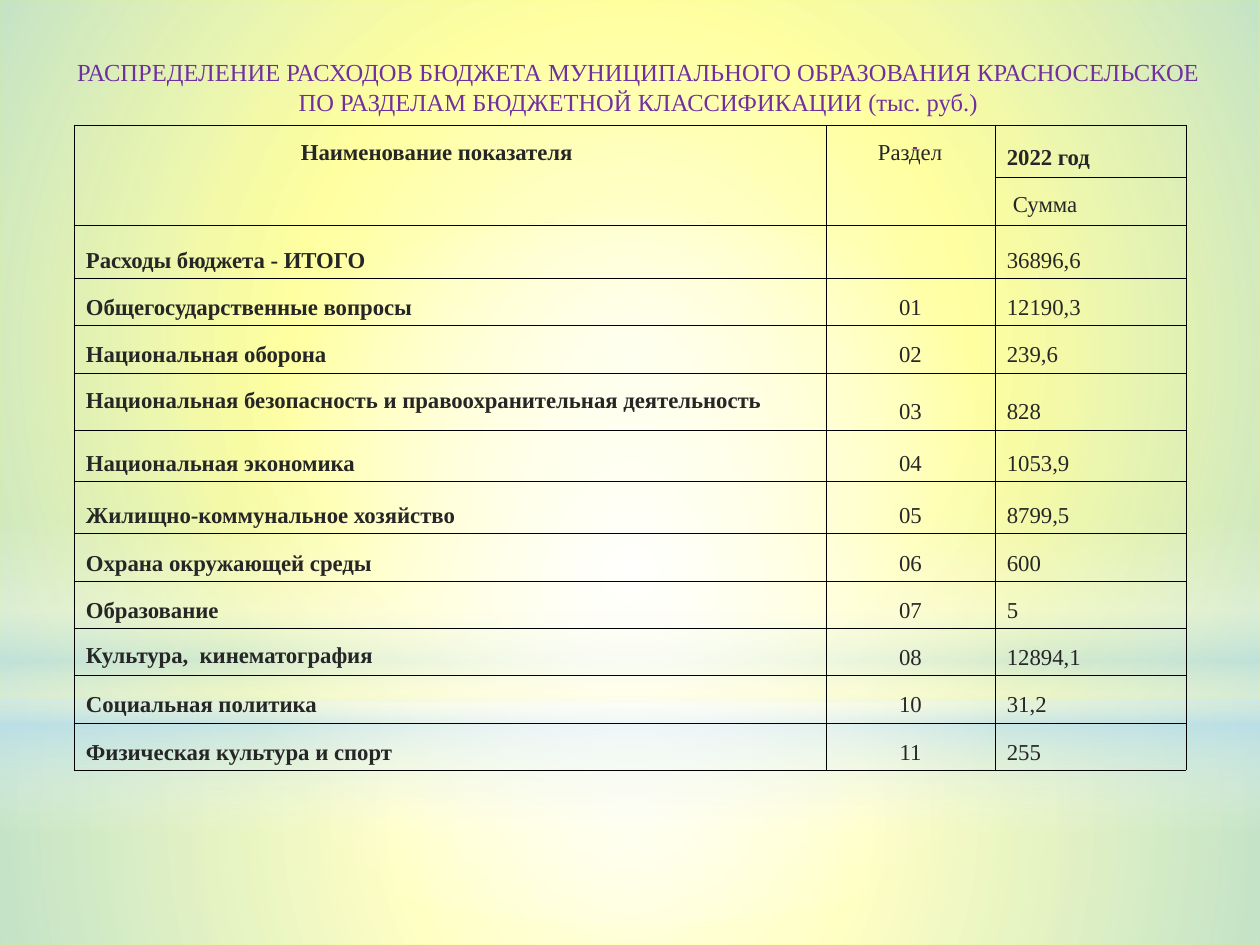
from dataclasses import dataclass
from lxml import etree
from pptx import Presentation
from pptx.dml.color import RGBColor
from pptx.enum.shapes import MSO_CONNECTOR, MSO_SHAPE
from pptx.enum.text import MSO_ANCHOR, PP_ALIGN
from pptx.oxml.ns import qn
from pptx.util import Emu, Pt

RECT, OVAL = MSO_SHAPE.RECTANGLE, MSO_SHAPE.OVAL
LINE = MSO_CONNECTOR.STRAIGHT
TOP, MID, LOW = MSO_ANCHOR.TOP, MSO_ANCHOR.MIDDLE, MSO_ANCHOR.BOTTOM
LEFT, CENTER = PP_ALIGN.LEFT, PP_ALIGN.CENTER


@dataclass(frozen=True)
class Theme:
    font: str = "Times New Roman"
    base: str = "FFFF00"
    white: str = "FFFFFF"
    sky: str = "B4DCFA"
    title: str = "7030A0"
    ink: str = "262626"
    rule: str = "000000"
    mark: str = "83297F"
    head: int = 14
    body: int = 13


THEME = Theme()
COLS = [752, 169, 191]
HEADS = [
    (0, 0, "Наименование показателя", True, 215, 20),
    (0, 1, "Раздел", False, 40, 20),
    (0, 2, "2022 год", True, 0, 25),
    (1, 2, "Сумма", False, 6, 20),
]
ROWS = [
    ("Расходы бюджета - ИТОГО", "", "36896,6", 46, LOW),
    ("Общегосударственные вопросы", "01", "12190,3", 46, LOW),
    ("Национальная оборона", "02", "239,6", 46, LOW),
    ("Национальная безопасность и правоохранительная деятельность",
     "03", "828", 57, TOP),
    ("Национальная экономика", "04", "1053,9", 52, LOW),
    ("Жилищно-коммунальное хозяйство", "05", "8799,5", 52, LOW),
    ("Охрана окружающей среды", "06", "600", 46, LOW),
    ("Образование", "07", "5", 46, LOW),
    ("Культура,  кинематография", "08", "12894,1", 47, TOP),
    ("Социальная политика", "10", "31,2", 46, LOW),
    ("Физическая культура и спорт", "11", "255", 46, LOW),
]


def px(n):
    return Emu(round(n * 914400 / 126))


def rgb(code):
    return RGBColor.from_string(code)


def node(root, tag, **attrs):
    return etree.SubElement(root, qn(tag), {k: str(v) for k, v in attrs.items()})


def inset(frame, side, top, low):
    frame.margin_left = frame.margin_right = px(side)
    frame.margin_top, frame.margin_bottom = px(top), px(low)


def write(para, text, size, color, bold=False):
    run = para.add_run()
    run.text = text
    font = run.font
    font.name, font.size, font.bold = THEME.font, Pt(size), bold
    font.color.rgb = rgb(color)


def glow(slide, kind, box, stops, angle=None):
    shape = slide.shapes.add_shape(kind, *map(px, box))
    shape.shadow.inherit = False
    shape.line.fill.background()
    shape.fill.gradient()
    grad = shape.element.spPr.find(qn("a:gradFill"))
    for child in list(grad):
        grad.remove(child)
    stack = node(grad, "a:gsLst")
    for pos, color, alpha in stops:
        stop = node(stack, "a:gs", pos=pos * 1000)
        tint = node(stop, "a:srgbClr", val=color)
        node(tint, "a:alpha", val=alpha * 1000)
    if angle is None:
        ring = node(grad, "a:path", path="circle")
        node(ring, "a:fillToRect", l=50000, t=50000, r=50000, b=50000)
    else:
        node(grad, "a:lin", ang=angle * 60000, scaled=0)


def backdrop(slide, box):
    x, y, w, h = box
    fill = slide.background.fill
    fill.solid()
    fill.fore_color.rgb = rgb(THEME.base)
    white, sky = THEME.white, THEME.sky
    split = 703
    glow(slide, RECT, (x, y + split, w, h - split),
         [(0, white, 91), (37, white, 76), (100, sky, 79)])
    glow(slide, RECT, (x, y, w, split),
         [(0, white, 89), (48, white, 62), (100, sky, 79)])
    glow(slide, RECT, (x, y + 519, w, 315),
         [(0, white, 0), (29, white, 30), (45, sky, 40),
          (55, white, 26), (65, sky, 60), (100, white, 0)], 90)
    glow(slide, OVAL, (x, y + 221, w, split), [(0, white, 100), (56, white, 0)])


def title(slide, box):
    frame = slide.shapes.add_textbox(*map(px, box)).text_frame
    frame.word_wrap = True
    frame.vertical_anchor = MID
    inset(frame, 13, 6, 6)
    para = frame.paragraphs[0]
    para.alignment = CENTER
    para.line_spacing = 1.05
    write(para, "РАСПРЕДЕЛЕНИЕ РАСХОДОВ БЮДЖЕТА МУНИЦИПАЛЬНОГО ОБРАЗОВАНИЯ "
          "КРАСНОСЕЛЬСКОЕ ПО РАЗДЕЛАМ БЮДЖЕТНОЙ КЛАССИФИКАЦИИ (тыс. руб.)",
          THEME.head, THEME.title)


def border(cell):
    props = cell._tc.get_or_add_tcPr()
    for spot, side in enumerate("LRTB"):
        edge = etree.Element(qn("a:ln" + side), w="762")
        fill = node(edge, "a:solidFill")
        node(fill, "a:srgbClr", val=THEME.rule)
        props.insert(spot, edge)


def put(cell, text, bold=False, align=LEFT, anchor=TOP, indent=0, top=20):
    inset(cell, 12, top, 6)
    cell.vertical_anchor = anchor
    para = cell.text_frame.paragraphs[0]
    para.alignment = align
    para.line_spacing = 0.78
    if indent:
        para._p.get_or_add_pPr().set("marL", str(px(indent)))
    if text:
        write(para, text, THEME.body, THEME.ink, bold)
    else:
        node(para._p, "a:endParaRPr", sz=THEME.body * 100)


def budget(slide, box):
    x, y = box
    highs = [52, 46] + [row[3] for row in ROWS]
    shape = slide.shapes.add_table(len(highs), len(COLS), px(x), px(y),
                                   px(sum(COLS)), px(sum(highs)))
    table = shape.table
    table.first_row = table.horz_banding = False
    for col, wide in zip(table.columns, COLS):
        col.width = px(wide)
    for row, high in zip(table.rows, highs):
        row.height = px(high)
    for cell in table.iter_cells():
        cell.fill.background()
        border(cell)
    for col in (0, 1):
        table.cell(0, col).merge(table.cell(1, col))
    for row, col, text, bold, indent, top in HEADS:
        put(table.cell(row, col), text, bold, indent=indent, top=top)
    for row, (name, code, sum_, _, anchor) in enumerate(ROWS, 2):
        put(table.cell(row, 0), name, True, anchor=anchor)
        put(table.cell(row, 1), code, align=CENTER, anchor=LOW)
        put(table.cell(row, 2), sum_, anchor=LOW)


def tick(slide, box):
    x, y, w, h = box
    line = slide.shapes.add_connector(LINE, px(x), px(y), px(x + w), px(y + h))
    line.line.color.rgb = rgb(THEME.mark)
    line.line.width = Pt(2)
    node(line.element.spPr, "a:effectLst")


def main():
    deck = Presentation()
    deck.slide_width, deck.slide_height = px(1260), px(945)
    slide = deck.slides.add_slide(deck.slide_layouts[6])
    backdrop(slide, (0, 0, 1260, 945))
    title(slide, (53, 25, 1171, 122))
    budget(slide, (74, 125))
    tick(slide, (915, 147, 0, 2))
    deck.save("out.pptx")


if __name__ == "__main__":
    main()
